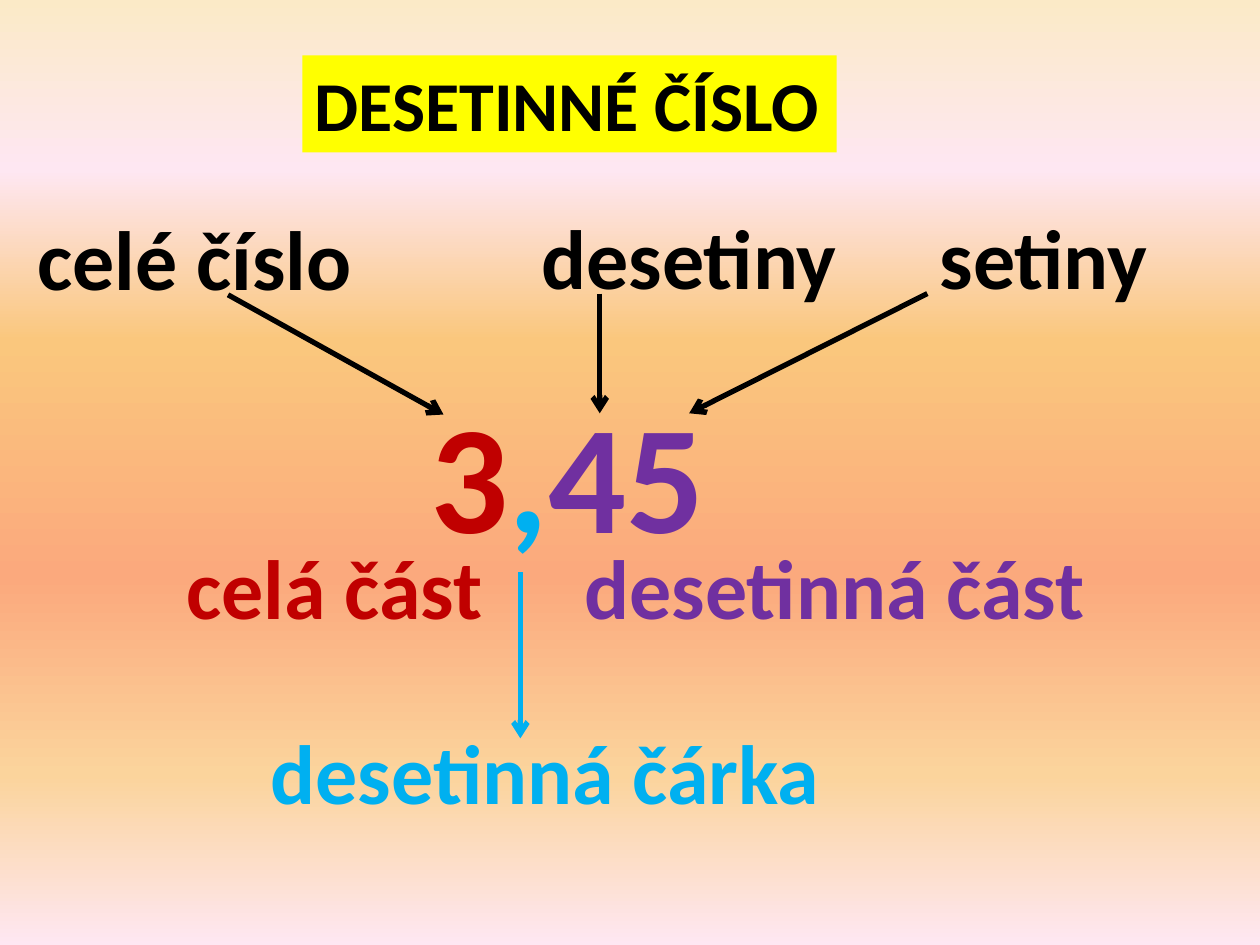
from lxml import etree
from pptx import Presentation
from pptx.dml.color import RGBColor as RGB
from pptx.enum.shapes import MSO_CONNECTOR as CONN
from pptx.enum.text import MSO_AUTO_SIZE as AUTO
from pptx.oxml.ns import qn
from pptx.util import Inches, Pt

C = {"black": "000000", "red": "C00000", "blue": "00B0F0",
     "purple": "7030A0", "yellow": "FFFF00"}
SKY = [(0, "FBEAC7"), (18, "FEE7F2"), (36, "FAC77D"),
       (61, "FBA97D"), (82, "FBD49C"), (100, "FEE7F2")]

prs = Presentation()
prs.slide_width, prs.slide_height = Inches(10), Inches(7.5)
COL, ROW = prs.slide_width / 100, prs.slide_height / 75
s = prs.slides.add_slide(prs.slide_layouts[6])

fill = s.background.fill
fill.gradient()
fill.gradient_angle = 270
stops = next(s.element.iter(qn("a:gsLst")))
for gs in list(stops):
    stops.remove(gs)
for pos, color in SKY:
    gs = etree.SubElement(stops, qn("a:gs"), pos=str(pos * 1000))
    etree.SubElement(gs, qn("a:srgbClr"), val=color)


def add_label(x, y, w, h, size, runs):
    sp = s.shapes.add_textbox(int(x * COL), int(y * ROW), int(w * COL), int(h * ROW))
    tf = sp.text_frame
    tf.word_wrap = False
    tf.auto_size = AUTO.SHAPE_TO_FIT_TEXT
    for text, color in runs:
        r = tf.paragraphs[0].add_run()
        r.text = text
        r.font.name, r.font.size, r.font.bold = "Calibri", Pt(size), True
        r.font.color.rgb = RGB.from_string(C[color])
    return sp


title = add_label(24, 4.4, 42.4, 7.7, 40, [("DESETINNÉ ČÍSLO", "black")])
title.fill.solid()
title.fill.fore_color.rgb = RGB.from_string(C["yellow"])

add_label(33.2, 29.6, 24, 15.8, 88, [("3", "red"), (",", "blue"), ("45", "purple")])

TOP, MIDDLE, BOTTOM = 15.8, 42, 56.7
for text, color, x, y, w in [
    ("celé číslo", "black", 2, TOP + 0.1, 27.2),
    ("desetiny", "black", 42, TOP, 25.7),
    ("setiny", "black", 73.6, TOP, 18.7),
    ("celá část", "red", 13.8, MIDDLE, 25.8),
    ("desetinná část", "purple", 45.4, MIDDLE, 42.1),
    ("desetinná čárka", "blue", 20.5, BOTTOM, 46.1),
]:
    add_label(x, y, w, 9.1, 48, [(text, color)])

for color, x1, y1, x2, y2 in [
    ("black", 18.1, 23.4, 35.2, 32.9),
    ("black", 47.6, 23.3, 47.6, 32.8),
    ("black", 73.6, 23.3, 54.7, 32.8),
    ("blue", 41.3, 45.4, 41.3, 58.6),
]:
    arrow = s.shapes.add_connector(CONN.STRAIGHT, int(x1 * COL), int(y1 * ROW),
                                   int(x2 * COL), int(y2 * ROW))
    arrow.line.color.rgb = RGB.from_string(C[color])
    arrow.line.width = Pt(3)
    etree.SubElement(arrow.line._get_or_add_ln(), qn("a:tailEnd"), type="arrow")
    etree.SubElement(arrow.element.spPr, qn("a:effectLst"))

prs.save("out.pptx")
